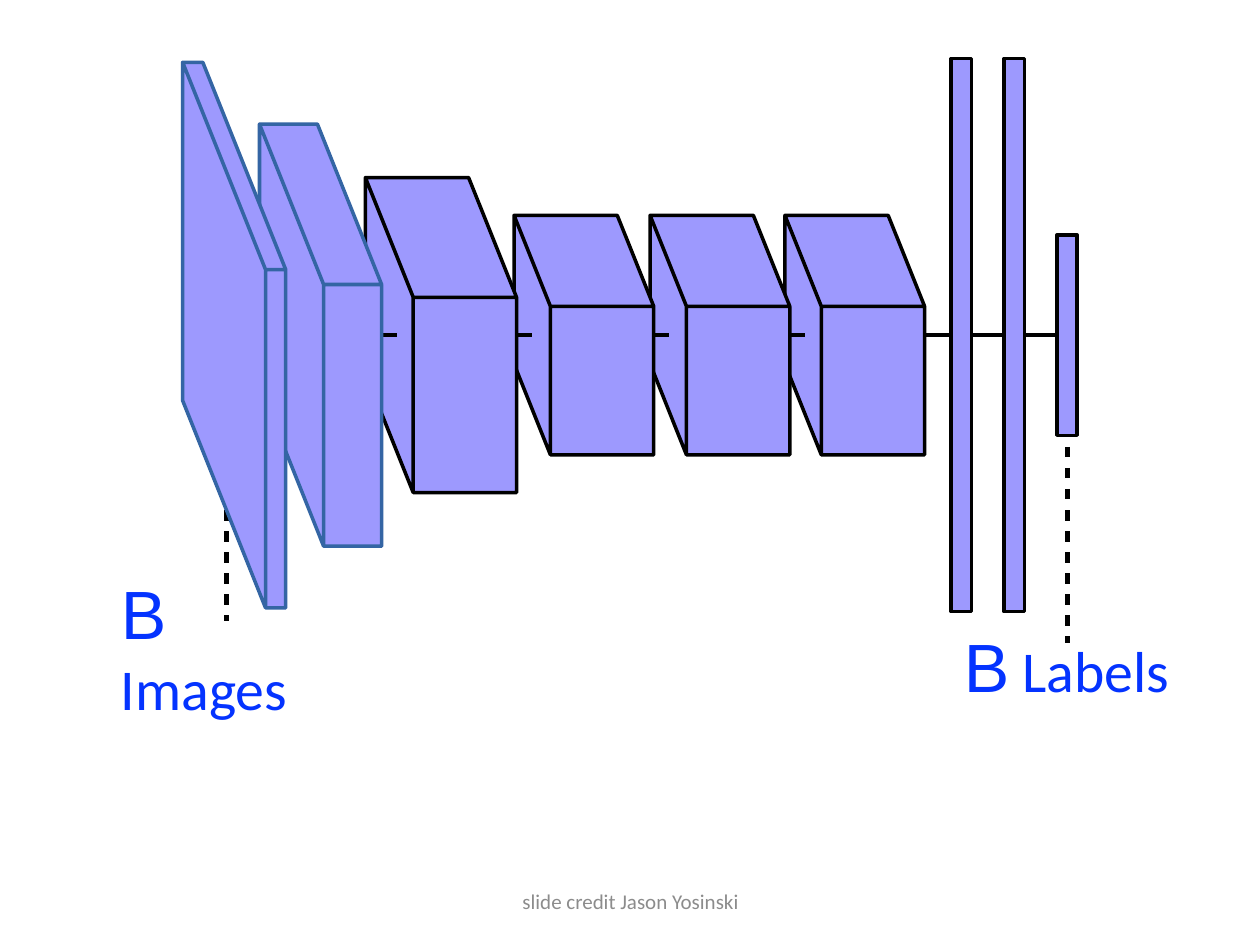
from lxml import etree
from pptx import Presentation
from pptx.dml.color import RGBColor
from pptx.enum import shapes, text
from pptx.oxml.ns import qn
from pptx.util import Inches, Pt

LILAC = RGBColor(0x9D, 0x99, 0xFE)
BLACK = RGBColor(0, 0, 0)
STEEL = RGBColor(0x34, 0x65, 0xA4)
BLUE = RGBColor(0x04, 0x33, 0xFF)
GRAY = RGBColor(0x8C, 0x8C, 0x8C)

# Content: everything in the network is centred on one horizontal axis
AXIS = 2.66
BLOCKS = [  # left, face width, full height, outline
    (1.45, 0.16, 4.33, STEEL),
    (2.06, 0.46, 3.35, STEEL),
    (2.90, 0.82, 2.50, BLACK),
    (4.08, 0.82, 1.90, BLACK),
    (5.16, 0.82, 1.90, BLACK),
    (6.23, 0.82, 1.90, BLACK),
]
RISE = 0.38    # share of a block's height taken by its slanted top
SLANT = 0.4    # sideways shift per unit of rise
STUB = 0.12    # reach of a link on each side of a block's right edge
BAR_LEFT, BAR_STEP, BAR_WIDTH = 7.55, 0.42, 0.16
BAR_HEIGHTS = [4.39, 4.39, 1.59]
DASHES = [(1.80, 4.05, 4.93), (8.47, 3.38, 5.10)]  # x, top, bottom
LABELS = [(0.90, 4.74, 1.90, " Images"), (7.59, 4.89, 1.77, " Labels")]
CREDIT = "slide credit Jason Yosinski"

deck = Presentation()
deck.slide_width, deck.slide_height = Inches(10), Inches(7.5)
page = deck.slides.add_slide(deck.slide_layouts[6])


def add_line(x1, y1, x2, y2, width=2, dashed=False):
    line = page.shapes.add_connector(
        shapes.MSO_CONNECTOR.STRAIGHT, *map(Inches, (x1, y1, x2, y2)))
    line.line.color.rgb = BLACK
    line.line.width = Pt(width)
    if dashed:
        dash = etree.SubElement(line.line._get_or_add_ln(), qn("a:custDash"))
        etree.SubElement(dash, qn("a:ds"), d="200000", sp="200000")
    etree.SubElement(line._element.spPr, qn("a:effectLst"))


def paint(shape, outline):
    shape.shadow.inherit = False
    shape.fill.solid()
    shape.fill.fore_color.rgb = LILAC
    shape.line.color.rgb = outline
    shape.line.width = Pt(2)


def add_block(left, width, height, outline):
    rise = height * RISE
    near, top = left + rise * SLANT, AXIS - height / 2
    edge, bottom = top + rise, top + height
    corner = (near, edge)
    side = [(near, bottom), (left, bottom - rise), (left, top), corner]
    roof = [(left, top), (left + width, top), (near + width, edge), corner]
    face = [(near + width, edge), (near + width, bottom), (near, bottom)]
    builder = page.shapes.build_freeform(Inches(near), Inches(edge))
    builder.add_line_segments(
        [(Inches(x), Inches(y)) for x, y in side + roof + face], close=True)
    paint(builder.convert_to_shape(), outline)


def add_text(left, top, width, height, spans, inset=None, wrap=False):
    box = page.shapes.add_textbox(*map(Inches, (left, top, width, height)))
    frame = box.text_frame
    frame.word_wrap = wrap
    frame.vertical_anchor = text.MSO_ANCHOR.MIDDLE
    if inset is not None:
        frame.margin_left = frame.margin_right = Inches(inset)
        frame.margin_top = frame.margin_bottom = Inches(inset)
    para = frame.paragraphs[0]
    for words, font, size, color in spans:
        span = para.add_run()
        span.text = words
        span.font.name, span.font.size = font, Pt(size)
        span.font.color.rgb = color
    return para


# Dashed leaders to the labels and the axis through the bars
for x, top, bottom in DASHES:
    add_line(x, top, x, bottom, 3, dashed=True)
add_line(7.29, AXIS, 8.49, AXIS)

# Layer blocks, from the rear (right) to the front (left)
last = len(BLOCKS) - 1
for i, (left, width, height, outline) in reversed(list(enumerate(BLOCKS))):
    right = left + height * RISE * SLANT + width
    if 0 < i < last:
        add_line(right - STUB, AXIS, right + STUB, AXIS)
    add_block(left, width, height, outline)

# Flat layers
for i, height in enumerate(BAR_HEIGHTS):
    bar = page.shapes.add_shape(
        shapes.MSO_SHAPE.RECTANGLE, Inches(BAR_LEFT + i * BAR_STEP),
        Inches(AXIS - height / 2), Inches(BAR_WIDTH), Inches(height))
    paint(bar, BLACK)

# Labels and credit
for left, top, width, words in LABELS:
    add_text(left, top, width, 0.78,
             [("B", "Arial", 39, BLUE), (words, "Calibri", 33, BLUE)], 0.06)
credit = add_text(3.42, 6.95, 3.17, 0.4, [(CREDIT, "Calibri", 12, GRAY)], wrap=True)
credit.alignment = text.PP_ALIGN.CENTER

deck.save("out.pptx")
